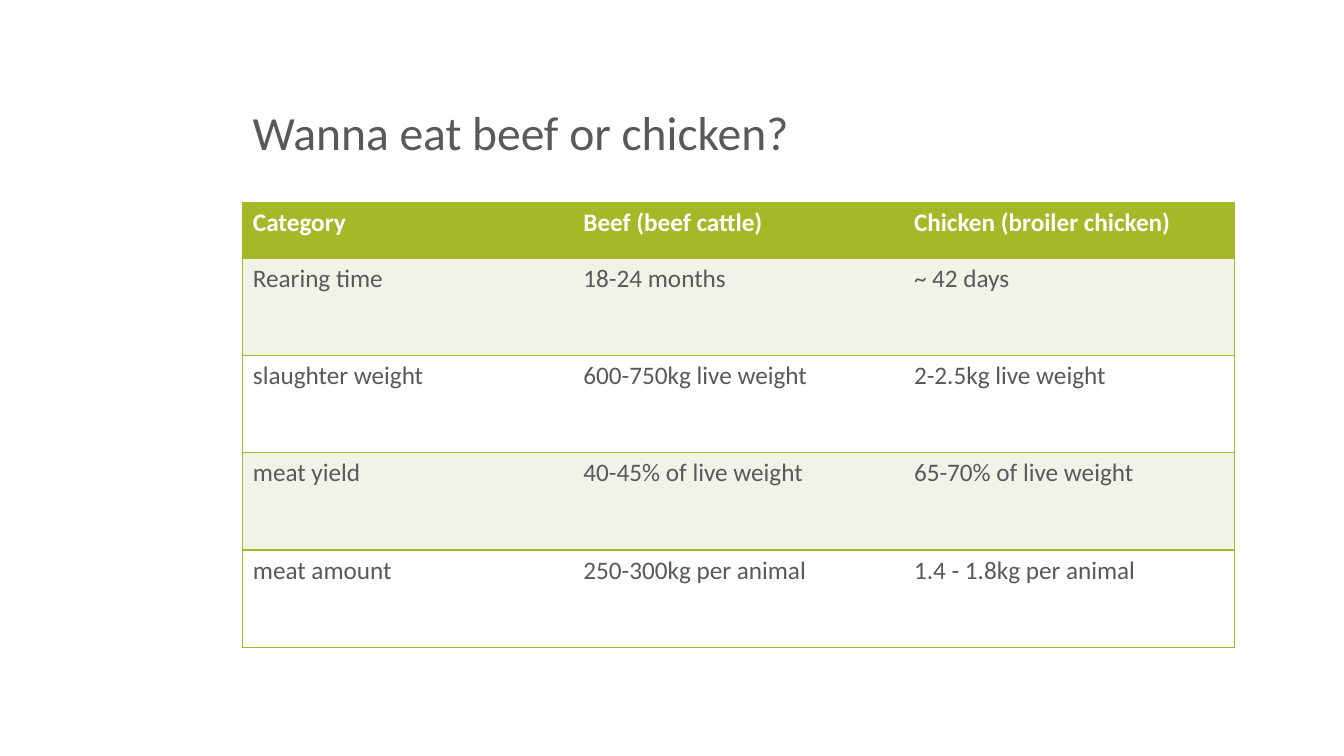
from lxml.etree import SubElement
from pptx import Presentation
from pptx.dml.color import RGBColor as RGB
from pptx.enum.text import MSO_ANCHOR as Anchor
from pptx.oxml.ns import qn
from pptx.util import Cm, Pt

THEME = {
    "font": "Calibri",
    "text": "595959",
    "green": "A6B727",
    "band": "F1F3E8",
    "white": "FFFFFF",
    "title_size": 34,
    "table_size": 18,
}
LEFT = Cm(6.12)
ROWS = [
    ("Category", "Beef (beef cattle)", "Chicken (broiler chicken)"),
    ("Rearing time", "18-24 months", "~ 42 days"),
    ("slaughter weight", "600-750kg live weight", "2-2.5kg live weight"),
    ("meat yield", "40-45% of live weight", "65-70% of live weight"),
    ("meat amount", "250-300kg per animal", "1.4 - 1.8kg per animal"),
]


def add_run(p, text, size, color, bold=False):
    r = p.add_run()
    r.text = text
    r.font.name = THEME["font"]
    r.font.size = Pt(size)
    r.font.bold = bold
    r.font.color.rgb = RGB.from_string(color)


def add_border(cell, side, visible):
    ln = SubElement(cell._tc.get_or_add_tcPr(), qn(f"a:ln{side}"), w=str(Pt(1)))
    if visible:
        fill = SubElement(ln, qn("a:solidFill"))
        SubElement(fill, qn("a:srgbClr"), val=THEME["green"])
    else:
        SubElement(ln, qn("a:noFill"))


prs = Presentation()
prs.slide_width, prs.slide_height = Cm(33.87), Cm(19.05)
s = prs.slides.add_slide(prs.slide_layouts[6])

title = s.shapes.add_textbox(LEFT, Cm(0.84), Cm(26.04), Cm(3.33))
tf = title.text_frame
tf.word_wrap = True
tf.vertical_anchor = Anchor.BOTTOM
p = tf.paragraphs[0]
p.line_spacing = 0.9
add_run(p, "Wanna eat beef or chicken?", THEME["title_size"], THEME["text"])

frame = s.shapes.add_table(len(ROWS), 3, LEFT, Cm(5.11), Cm(24.99), Cm(11.2))
table = frame.table
for column in table.columns:
    column.width = Cm(8.33)
for i, values in enumerate(ROWS):
    header = i == 0
    table.rows[i].height = Cm(1.4 if header else 2.45)
    band = THEME["green"] if header else THEME["band" if i % 2 else "white"]
    color = THEME["white" if header else "text"]
    for j, value in enumerate(values):
        cell = table.cell(i, j)
        for side, visible in (("L", j == 0), ("R", j == 2), ("T", True), ("B", True)):
            add_border(cell, side, visible)
        cell.fill.solid()
        cell.fill.fore_color.rgb = RGB.from_string(band)
        add_run(cell.text_frame.paragraphs[0], value, THEME["table_size"], color, header)

prs.save("out.pptx")
